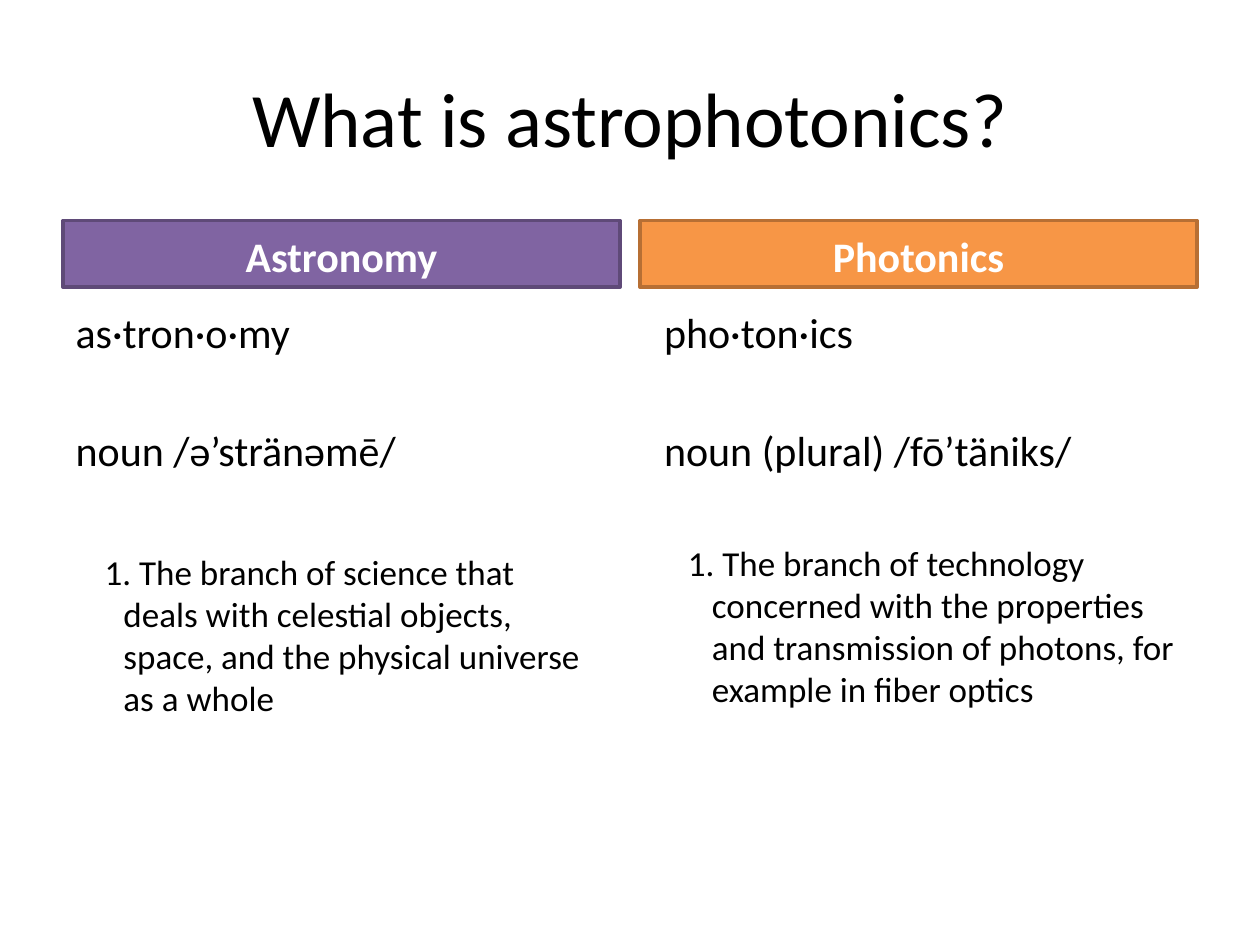
from pptx import Presentation
from pptx.dml.color import RGBColor
from pptx.enum.text import MSO_ANCHOR, MSO_AUTO_SIZE, PP_ALIGN
from pptx.oxml.ns import qn
from pptx.util import Inches, Pt

LEFT, CENTER = PP_ALIGN.LEFT, PP_ALIGN.CENTER
TOP, MIDDLE, BOTTOM = MSO_ANCHOR.TOP, MSO_ANCHOR.MIDDLE, MSO_ANCHOR.BOTTOM

FONT = "Calibri"
BLACK, WHITE = "000000", "FFFFFF"
TITLE = "What is astrophotonics?"
COLUMNS = [
    dict(heading="Astronomy", fill="8064A2", line="5F4A78",
         word="as·tron·o·my", sound="noun /ə’stränəmē/",
         meaning="1. The branch of science that deals with celestial objects, "
                 "space, and the physical universe as a whole",
         first_indent=-0.15, gap=43),
    dict(heading="Photonics", fill="F79646", line="B76F34",
         word="pho·ton·ics", sound="noun (plural) /fō’täniks/",
         meaning="1. The branch of technology concerned with the properties "
                 "and transmission of photons, for example in fiber optics",
         first_indent=-0.19, gap=38),
]

MARGIN, CONTENT_W = 0.5, 9
HEAD_W, BODY_W = 4.42, 4.33
HANG = 0.38
WORD_GAP = 39


def rgb(value):
    return RGBColor.from_string(value)


def place(sp, x, y, w, h, anchor):
    sp.left, sp.top, sp.width, sp.height = map(Inches, (x, y, w, h))
    tf = sp.text_frame
    tf.word_wrap = True
    tf.auto_size = MSO_AUTO_SIZE.NONE
    tf.vertical_anchor = anchor
    return tf


def write(p, text, size=24, color=BLACK, bold=False, align=LEFT, before=0,
          margin=0, indent=0):
    p.alignment = align
    p.space_before = Pt(before)
    pPr = p._p.get_or_add_pPr()
    pPr.set("marL", str(Inches(margin)))
    pPr.set("indent", str(Inches(indent)))
    pPr.append(pPr.makeelement(qn("a:buNone"), {}))
    r = p.add_run()
    r.text = text
    r.font.name, r.font.size, r.font.bold = FONT, Pt(size), bold
    r.font.color.rgb = rgb(color)


def add_column(head, body, column, align_right):
    def x(width):
        return MARGIN + (CONTENT_W - width if align_right else 0)

    tf = place(head, x(HEAD_W), 1.75, HEAD_W, 0.53, BOTTOM)
    head.fill.solid()
    head.fill.fore_color.rgb = rgb(column["fill"])
    head.line.color.rgb = rgb(column["line"])
    head.line.width = Pt(2)
    write(tf.paragraphs[0], column["heading"], color=WHITE, bold=True,
          align=CENTER, before=4.8)

    tf = place(body, x(BODY_W), 2.38, BODY_W, 4.32, TOP)
    write(tf.paragraphs[0], column["word"], before=4.8,
          margin=HANG, indent=-HANG)
    write(tf.add_paragraph(), column["sound"], before=WORD_GAP,
          margin=HANG, indent=-HANG)
    write(tf.add_paragraph(), column["meaning"], size=20,
          before=column["gap"], margin=HANG, indent=column["first_indent"])


prs = Presentation()
prs.slide_width, prs.slide_height = Inches(10), Inches(7.5)
comparison = prs.slide_layouts.get_by_name("Comparison")
s = prs.slides.add_slide(comparison)

tf = place(s.shapes.title, MARGIN, 0.3, CONTENT_W, 1.25, MIDDLE)
write(tf.paragraphs[0], TITLE, size=44, align=CENTER)

for i, column in enumerate(COLUMNS):
    add_column(s.placeholders[2 * i + 1], s.placeholders[2 * i + 2], column,
               align_right=i == 1)

for sp in list(s.placeholders):
    if not sp.text_frame.text:
        sp.element.getparent().remove(sp.element)

prs.save("out.pptx")
